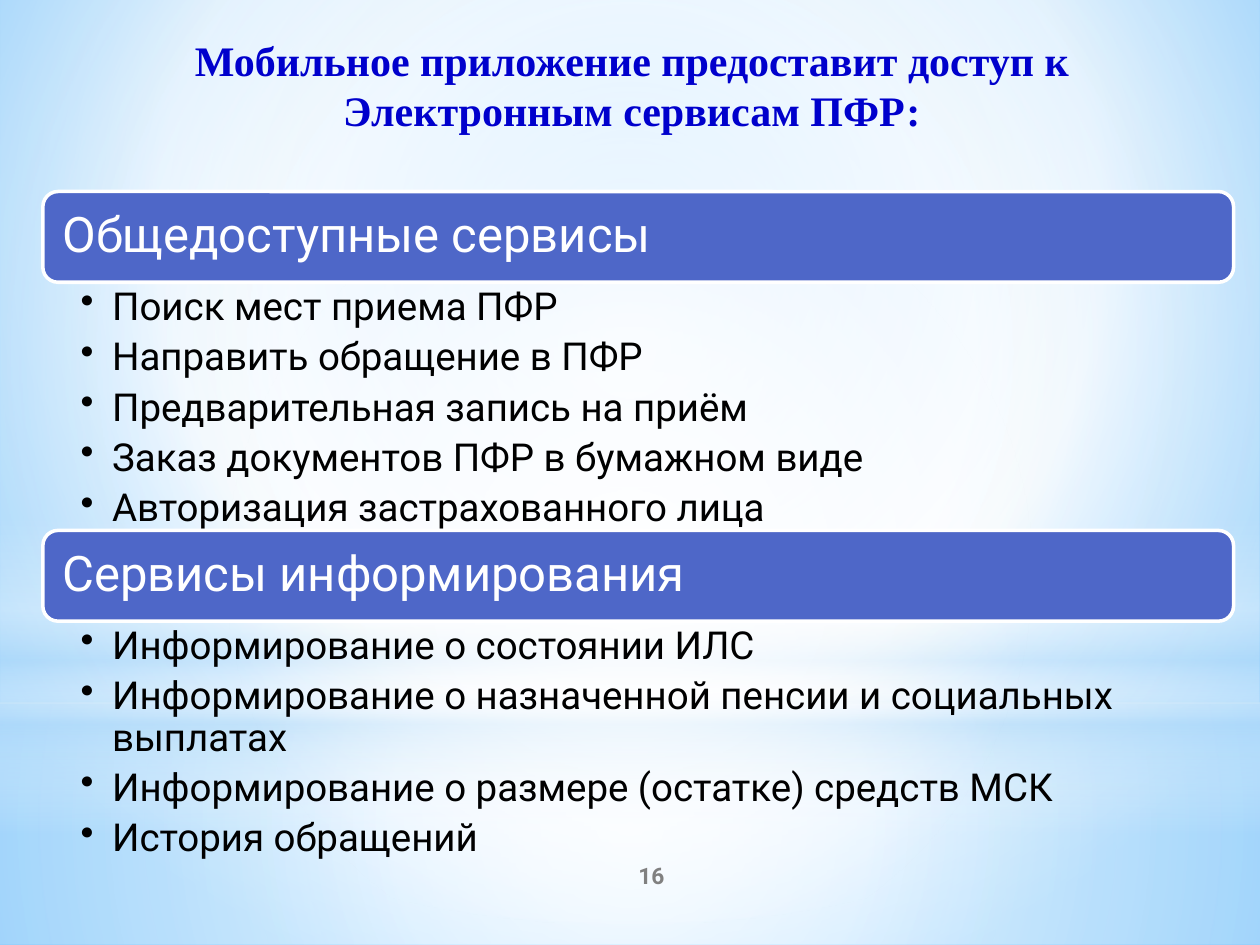
from pptx import Presentation
from pptx.dml.color import RGBColor
from pptx.enum.shapes import MSO_SHAPE as Preset
from pptx.enum.text import MSO_ANCHOR as Anchor, MSO_AUTO_SIZE as AutoSize, PP_ALIGN as Align
from pptx.oxml import parse_xml
from pptx.oxml.ns import nsdecls, qn
from pptx.util import Inches, Pt

theme = {
    "white": "FFFFFF",
    "haze": "B4DCFA",
    "sky": [(0, "9ED5FF", 100), (60, "FFFFFF", 100), (100, "5BB9FF", 100)],
    "header": RGBColor.from_string("4E67C8"),
    "outline": RGBColor.from_string("FFFFFF"),
    "title": {"name": "Times New Roman", "size": Pt(24), "bold": True, "color": "0000CC"},
    "heading": {"name": "Roboto", "size": Pt(28), "bold": False, "color": "FFFFFF"},
    "item": {"name": "Roboto", "size": Pt(22), "bold": False, "color": "000000"},
    "number": {"name": "Roboto", "size": Pt(13), "bold": True, "color": "808080"},
}


def paint_gradient(element, stops, focus=None):
    stop_xml = "".join(
        f'<a:gs pos="{position * 1000}"><a:srgbClr val="{color}">'
        f'<a:alpha val="{opacity * 1000}"/></a:srgbClr></a:gs>'
        for position, color, opacity in stops
    )
    if focus:
        sides = " ".join(f'{side}="{share * 1000}"' for side, share in zip("ltrb", focus))
        direction = f'<a:path path="circle"><a:fillToRect {sides}/></a:path>'
    else:
        direction = '<a:lin ang="5400000" scaled="0"/>'
    gradient = parse_xml(
        f'<a:gradFill {nsdecls("a")} rotWithShape="1">'
        f"<a:gsLst>{stop_xml}</a:gsLst>{direction}</a:gradFill>"
    )
    solid = next(element.iter(qn("a:solidFill")))
    solid.getparent().replace(solid, gradient)


def write(frame, lines, style, paragraph_format, frame_format):
    for key, value in ({"word_wrap": True, "auto_size": AutoSize.NONE} | frame_format).items():
        setattr(frame, key, value)
    frame.text = "\n".join(lines)
    for paragraph in frame.paragraphs:
        for key, value in paragraph_format.items():
            setattr(paragraph, key, value)
        font = paragraph.runs[0].font
        for key in ("name", "size", "bold"):
            setattr(font, key, style[key])
        font.color.rgb = RGBColor.from_string(style["color"])


prs = Presentation()
prs.slide_width, prs.slide_height = Inches(10), Inches(7.5)
slide = prs.slides.add_slide(prs.slide_layouts[5])

slide.background.fill.solid()
paint_gradient(slide.element, theme["sky"], (20, 10, 20, 60))

white, haze = theme["white"], theme["haze"]
center = (50, 50, 50, 50)
glows = [
    (Preset.RECTANGLE, 5.58, 1.92, [(0, white, 91), (37, white, 76), (100, haze, 79)], center),
    (Preset.RECTANGLE, 0, 5.58, [(0, white, 89), (48, white, 62), (100, haze, 79)], center),
    (Preset.RECTANGLE, 4.12, 2.5, [(0, white, 0), (29, white, 30), (45, haze, 40),
                                   (55, white, 26), (65, haze, 60), (100, white, 0)], None),
    (Preset.OVAL, 1.75, 5.58, [(0, white, 100), (56, white, 0)], center),
]
for preset, top, height, stops, focus in glows:
    glow = slide.shapes.add_shape(preset, 0, Inches(top), prs.slide_width, Inches(height))
    glow.shadow.inherit = False
    glow.line.fill.background()
    glow.fill.solid()
    paint_gradient(glow.element, stops, focus)

title = slide.shapes.title
title.left, title.top, title.width, title.height = map(Inches, (0.42, 0.22, 9.19, 0.91))
write(title.text_frame, ["Мобильное приложение предоставит доступ к Электронным сервисам ПФР:"],
      theme["title"], {"alignment": Align.CENTER}, {"vertical_anchor": Anchor.TOP})
title.element.getparent().append(title.element)

left, width, header_height = Inches(0.34), Inches(9.45), Inches(0.72)
header_frame = {f"margin_{side}": Inches(0.12) for side in ("left", "top", "right", "bottom")}
header_frame["vertical_anchor"] = Anchor.MIDDLE
list_frame = {"margin_left": Inches(0.3), "margin_right": Inches(0.22),
              "margin_top": Inches(0.04), "margin_bottom": Inches(0.04),
              "vertical_anchor": Anchor.TOP}
sections = [
    (1.52, 1.96, "Общедоступные сервисы", [
        "Поиск мест приема ПФР",
        "Направить обращение в ПФР",
        "Предварительная запись на приём",
        "Заказ документов ПФР в бумажном виде",
        "Авторизация застрахованного лица",
    ]),
    (4.21, 1.9, "Сервисы информирования", [
        "Информирование о состоянии ИЛС",
        "Информирование о назначенной пенсии и социальных выплатах",
        "Информирование о размере (остатке) средств МСК",
        "История обращений",
    ]),
]
for top, list_height, heading, services in sections:
    header = slide.shapes.add_shape(Preset.ROUNDED_RECTANGLE, left, Inches(top), width, header_height)
    header.shadow.inherit = False
    header.fill.solid()
    header.fill.fore_color.rgb = theme["header"]
    header.line.color.rgb = theme["outline"]
    header.line.width = Pt(2)
    write(header.text_frame, [heading], theme["heading"],
          {"alignment": Align.LEFT, "line_spacing": 0.9}, header_frame)

    service_list = slide.shapes.add_textbox(left, Inches(top) + header_height, width, Inches(list_height))
    write(service_list.text_frame, services, theme["item"],
          {"line_spacing": 0.9, "space_after": Pt(5)}, list_frame)
    for paragraph in service_list.text_frame.paragraphs:
        properties = paragraph._p.get_or_add_pPr()
        properties.set("marL", str(Inches(0.25)))
        properties.set("indent", str(-Inches(0.25)))
        properties.append(parse_xml(f'<a:buChar {nsdecls("a")} char="•"/>'))

page_number = slide.shapes.add_textbox(Inches(4.17), Inches(6.75), Inches(2), Inches(0.4))
write(page_number.text_frame, ["16"], theme["number"],
      {"alignment": Align.CENTER}, {"vertical_anchor": Anchor.MIDDLE})

prs.save("out.pptx")
